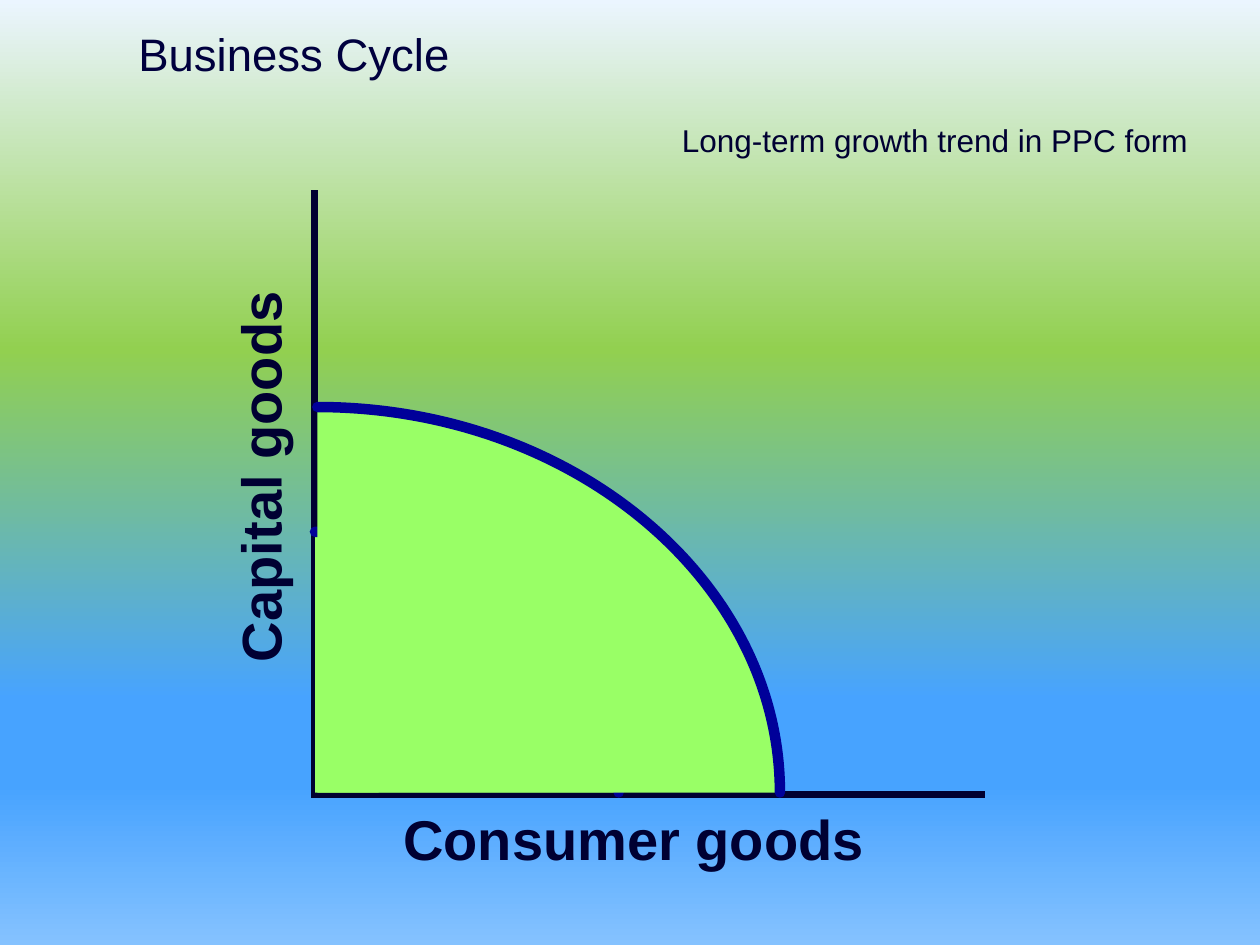
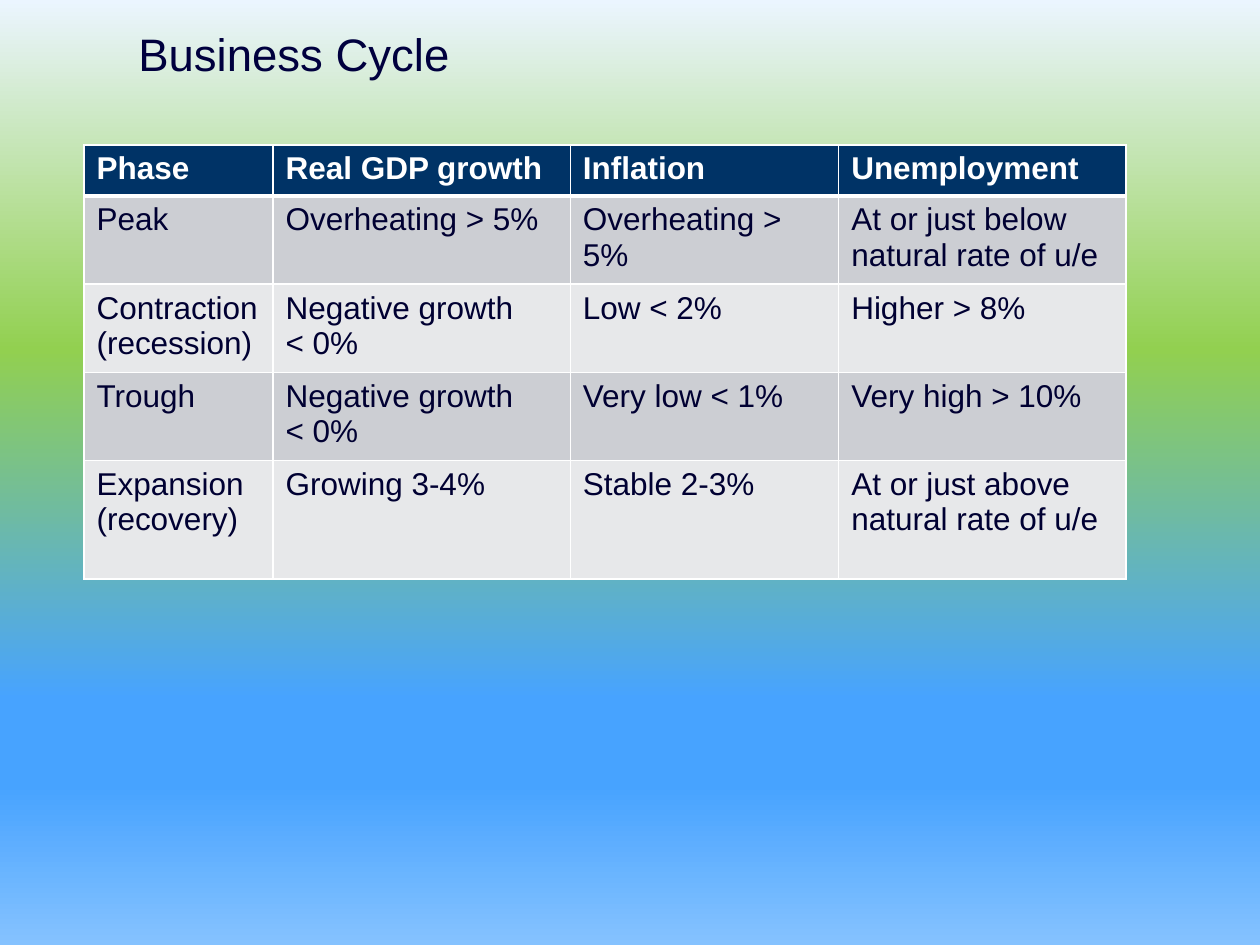
from copy import deepcopy
from dataclasses import dataclass

from lxml.etree import SubElement
from pptx import Presentation
from pptx.dml.color import RGBColor as RGB
from pptx.enum.shapes import MSO_CONNECTOR as LINK
from pptx.enum.text import MSO_ANCHOR as ANCHOR, PP_ALIGN as ALIGN
from pptx.oxml.ns import qn
from pptx.slide import Slide
from pptx.table import _Cell as Cell
from pptx.text.text import TextFrame as Frame
from pptx.util import Pt

FONT = "Arial"
BEND = 0.55  # handle length of a quarter ellipse, as a share of its radius
HEX = {
    "title": "00003E", "ink": "000032", "curve": "000099", "area": "99FF66",
    "head": "003366", "odd": "CCCED3", "even": "E7E8EA", "white": "FFFFFF",
    "mist": "EBF5FF", "grass": "92D050", "sky": "47A3FF", "haze": "85C2FF",
}
STOPS = [(0, "mist"), (37, "grass"), (74, "sky"), (83, "sky"), (100, "haze")]


@dataclass
class Label:
    text: str
    left: float
    top: float
    width: float
    height: float
    size: int
    color: str = "ink"
    bold: bool = False
    align: ALIGN = ALIGN.LEFT
    wrap: bool = True
    turn: int = 0
    anchor: ANCHOR = ANCHOR.TOP


@dataclass
class Axis:
    x1: float
    y1: float
    x2: float
    y2: float


@dataclass
class Sector:
    """Quarter ellipse up and right of its corner (x, y)."""
    x: float
    y: float
    width: float
    height: float


TITLE = Label("Business Cycle", 72, 12, 648, 36.7, 26, "title",
              anchor=ANCHOR.MIDDLE)
NAMES = [
    Label("Capital goods", 34.6, 249.4, 227.5, 46, 32, bold=True,
          align=ALIGN.CENTER, wrap=False, turn=270),
    Label("Consumer goods", 222.5, 456.2, 279.4, 46, 32, bold=True,
          align=ALIGN.CENTER, wrap=False),
]
TREND = Label("Long-term growth trend in PPC form", 382.6, 65.8, 311.8, 28.8, 18)
AXES = [Axis(179.8, 108.7, 179.8, 455.8), Axis(179.3, 453.8, 563, 453.8)]
SECTORS = [Sector(180, 452.9, 173.5, 149), Sector(181.4, 452.9, 264.3, 220.3)]

WIDTHS = [108, 169.9, 153.4, 164.2]
HEIGHTS = [29.2, 29.2, 29.2, 29.2, 67.6]
PHASES = [
    ["Phase", "Real GDP growth", "Inflation", "Unemployment"],
    ["Peak", "Overheating > 5%", "Overheating > 5%",
     "At or just below natural rate of u/e"],
    ["Contraction\n(recession)", "Negative growth\n< 0%", "Low < 2%",
     "Higher > 8%"],
    ["Trough", "Negative growth\n< 0%", "Very low < 1%", "Very high > 10%"],
    ["Expansion\n(recovery)", "Growing 3-4%", "Stable 2-3%",
     "At or just above natural rate of u/e"],
]


def rgb(name: str) -> RGB:
    return RGB.from_string(HEX[name])


def write(frame: Frame, text: str, *, size: int, color: str = "ink",
          bold: bool = False, align: ALIGN = ALIGN.LEFT) -> None:
    """Fill a frame, one paragraph for each line of text."""
    for i, line in enumerate(text.split("\n")):
        para = frame.add_paragraph() if i else frame.paragraphs[0]
        para.alignment = align
        run = para.add_run()
        run.text = line
        font = run.font
        font.name, font.size, font.bold = FONT, Pt(size), bold
        font.color.rgb = rgb(color)


def add_label(slide: Slide, label: Label) -> None:
    box = slide.shapes.add_textbox(Pt(label.left), Pt(label.top),
                                   Pt(label.width), Pt(label.height))
    box.rotation = label.turn
    frame = box.text_frame
    frame.word_wrap = label.wrap
    frame.vertical_anchor = label.anchor
    write(frame, label.text, size=label.size, color=label.color,
          bold=label.bold, align=label.align)


def add_axes(slide: Slide, axes: list[Axis]) -> None:
    group = slide.shapes.add_group_shape()
    for axis in axes:
        line = group.shapes.add_connector(LINK.STRAIGHT, Pt(axis.x1), Pt(axis.y1),
                                          Pt(axis.x2), Pt(axis.y2))
        line.line.color.rgb = rgb("ink")
        line.line.width = Pt(4)
        SubElement(line._element.spPr, qn("a:effectLst"))


def add_sector(slide: Slide, sector: Sector) -> None:
    """Draw a filled sector whose outline runs along the arc only."""
    top, right = sector.y - sector.height, sector.x + sector.width
    build = slide.shapes.build_freeform(Pt(sector.x), Pt(top))
    build.add_line_segments([(Pt(right), Pt(sector.y)),
                             (Pt(sector.x), Pt(sector.y))], close=True)
    shape = build.convert_to_shape()
    shape.shadow.inherit = False
    shape.fill.solid()
    shape.fill.fore_color.rgb = rgb("area")
    shape.line.color.rgb = rgb("curve")
    shape.line.width = Pt(6)
    shape.line._get_or_add_ln().set("cap", "rnd")

    area = shape._element.find(".//" + qn("a:path"))
    wide, high = sector.width, sector.height
    curve = SubElement(area, qn("a:cubicBezTo"))
    for x, y in [(wide * BEND, 0), (wide, high * (1 - BEND)), (wide, high)]:
        SubElement(curve, qn("a:pt"), x=str(Pt(x)), y=str(Pt(y)))
    area.replace(area[1], curve)

    edge = deepcopy(area)
    for part in edge[2:]:
        edge.remove(part)
    edge.set("fill", "none")
    area.set("stroke", "0")
    area.addprevious(edge)


def set_edges(cell: Cell, **widths: float) -> None:
    """Give the cell white borders; the keys are L, R, T and B."""
    props = cell._tc.get_or_add_tcPr()
    for side, width in widths.items():
        line = SubElement(props, qn(f"a:ln{side}"), w=str(Pt(width)))
        fill = SubElement(line, qn("a:solidFill"))
        SubElement(fill, qn("a:srgbClr"), val=HEX["white"])


def add_phases(slide: Slide) -> None:
    frame = slide.shapes.add_table(len(HEIGHTS), len(WIDTHS), Pt(48), Pt(82.8),
                                   Pt(sum(WIDTHS)), Pt(sum(HEIGHTS)))
    table = frame.table
    for col, width in zip(table.columns, WIDTHS):
        col.width = Pt(width)
    for i, (row, height, texts) in enumerate(zip(table.rows, HEIGHTS, PHASES)):
        row.height = Pt(height)
        head = i == 0
        tint = "head" if head else "odd" if i % 2 else "even"
        for cell, text in zip(row.cells, texts):
            set_edges(cell, L=1, R=1, T=3 if i == 1 else 1, B=3 if head else 1)
            cell.fill.solid()
            cell.fill.fore_color.rgb = rgb(tint)
            write(cell.text_frame, text, size=18, bold=head,
                  color="white" if head else "ink")


def set_back(deck: Presentation) -> None:
    """Give every slide the shared top-to-bottom gradient."""
    master = deck.slide_master
    fill = master.background.fill
    fill.gradient()
    fill.gradient_angle = 270
    stops = master._element.find(".//" + qn("a:gsLst"))
    for stop in list(stops):
        stops.remove(stop)
    for place, name in STOPS:
        stop = SubElement(stops, qn("a:gs"), pos=str(place * 1000))
        SubElement(stop, qn("a:srgbClr"), val=HEX[name])


def add_slide(deck: Presentation) -> Slide:
    slide = deck.slides.add_slide(deck.slide_layouts[6])
    add_label(slide, TITLE)
    return slide


def main() -> None:
    deck = Presentation()
    deck.slide_width, deck.slide_height = Pt(720), Pt(540)
    set_back(deck)

    growth = add_slide(deck)
    add_axes(growth, AXES)
    for name in NAMES:
        add_label(growth, name)
    for sector in SECTORS:
        add_sector(growth, sector)
    add_label(growth, TREND)

    add_phases(add_slide(deck))
    deck.save("out.pptx")


if __name__ == "__main__":
    main()
